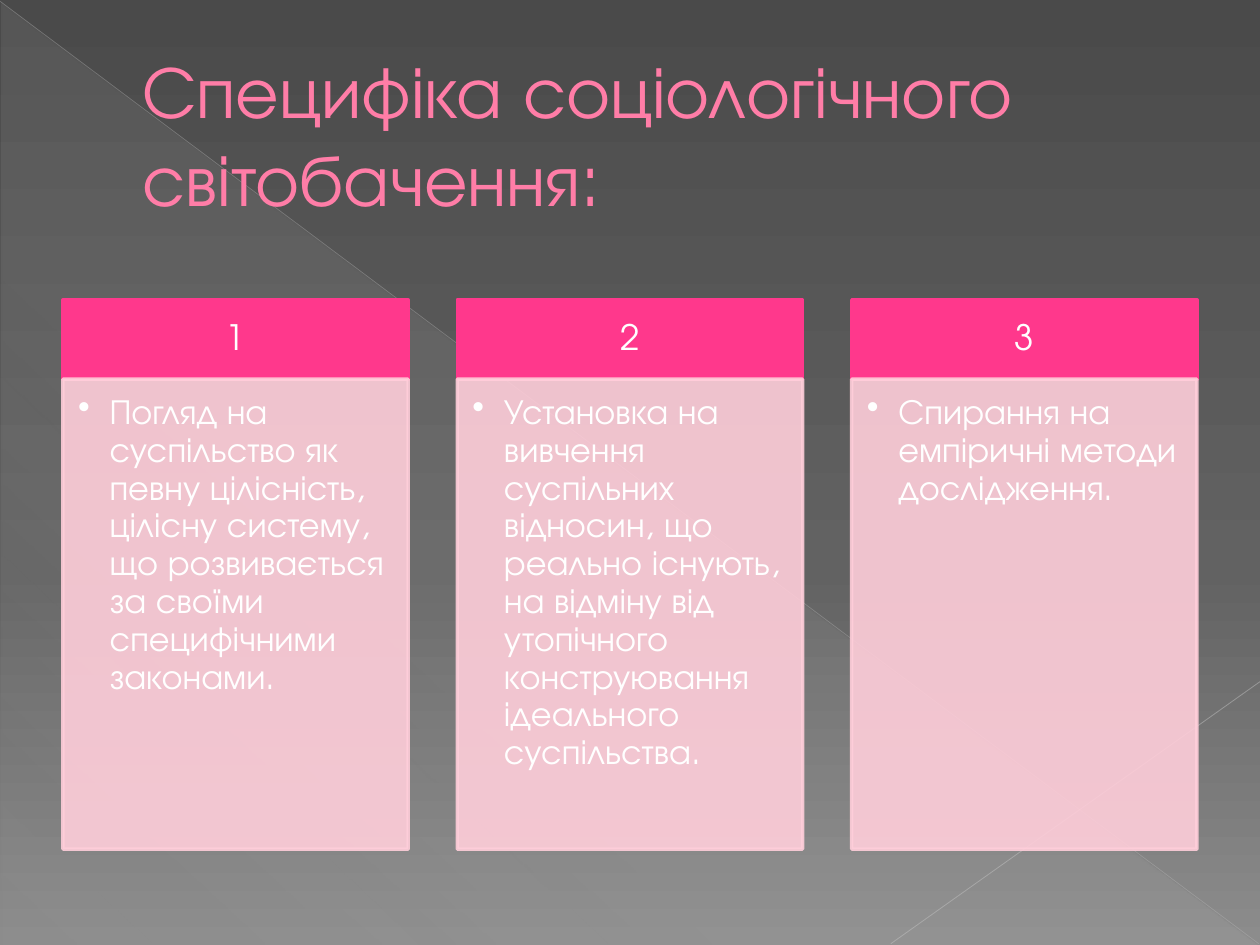
from dataclasses import dataclass

from lxml.etree import SubElement
from pptx import Presentation
from pptx.dml.color import RGBColor
from pptx.enum.shapes import MSO_CONNECTOR, MSO_SHAPE
from pptx.enum.text import MSO_ANCHOR, PP_ALIGN
from pptx.oxml.ns import qn
from pptx.util import Inches, Pt

FONT = "TeX Gyre Adventor"
WHITE = RGBColor(0xFF, 0xFF, 0xFF)
TITLE_PINK = RGBColor(0xFF, 0x7D, 0xA7)
TITLE_EDGE = RGBColor(0xB1, 0x27, 0x61)
HEADER_PINK = RGBColor(0xFF, 0x38, 0x8C)
BODY_PINK = RGBColor(0xFF, 0xCE, 0xDA)
TRIANGLE_GREY = RGBColor(0xD2, 0xD2, 0xD2)
DIAGONAL_GREY = RGBColor(0xBF, 0xBF, 0xBF)
CORNER_GREY = RGBColor(0xC6, 0xC6, 0xC6)
BACKDROP_DARK = RGBColor(0x4A, 0x4A, 0x4A)
BACKDROP_MIDDLE = RGBColor(0x62, 0x62, 0x62)
BACKDROP_LIGHT = RGBColor(0x8C, 0x8C, 0x8C)

CARD_LEFT, CARD_PITCH, CARD_WIDTH = 0.5, 3.13, 2.74
HEADER_TOP, HEADER_HEIGHT = 2.38, 0.63
BODY_TOP, BODY_HEIGHT = HEADER_TOP + HEADER_HEIGHT, 3.73

STATEMENTS = [
    "Погляд на суспільство як певну цілісність, цілісну систему, "
    "що розвивається за своїми специфічними законами.",
    "Установка на вивчення суспільних відносин, що реально існують, "
    "на відміну від утопічного конструювання ідеального суспільства.",
    "Спирання на емпіричні методи дослідження.",
]


@dataclass
class Stop:
    position: int
    color: RGBColor
    opacity: int = 100


@dataclass
class Diagonal:
    start: tuple[float, float]
    end: tuple[float, float]
    color: RGBColor
    width: float
    opacity: int


DIAGONALS = [
    Diagonal((0, 0.01), (9.99, 7.49), DIAGONAL_GREY, 0.39, 35),
    Diagonal((10, 5.41), (7.07, 7.49), CORNER_GREY, 0.47, 45),
]


def add_color(parent, color: RGBColor, opacity: int = 100) -> None:
    node = SubElement(parent, qn("a:srgbClr"), val=str(color))
    if opacity < 100:
        SubElement(node, qn("a:alpha"), val=str(opacity * 1000))


def set_gradient(fill, owner, stops: list[Stop], angle: int) -> None:
    """Give the fill found inside the owner element its stops and clockwise angle."""
    fill.gradient()
    gradient = owner.find(".//" + qn("a:gradFill"))
    stop_list = gradient.find(qn("a:gsLst"))
    for old_stop in list(stop_list):
        stop_list.remove(old_stop)
    for stop in stops:
        node = SubElement(stop_list, qn("a:gs"), pos=str(stop.position * 1000))
        add_color(node, stop.color, stop.opacity)
    gradient.find(qn("a:lin")).set("ang", str(angle * 60000))


def set_opacity(shape, opacity: int) -> None:
    """Apply one opacity to the fill and the line of a shape."""
    for color in shape.element.spPr.iter(qn("a:srgbClr")):
        SubElement(color, qn("a:alpha"), val=str(opacity * 1000))


def style_text(paragraph, size: float, color: RGBColor) -> None:
    for run in paragraph.runs:
        run.font.name = FONT
        run.font.size = Pt(size)
        run.font.color.rgb = color


def set_indent(paragraph, margin: float, first_line: float = 0) -> None:
    properties = paragraph._p.get_or_add_pPr()
    properties.set("marL", str(Inches(margin)))
    properties.set("indent", str(Inches(first_line)))


def set_insets(frame, left: float, top: float, right: float, bottom: float) -> None:
    frame.margin_left, frame.margin_top = Inches(left), Inches(top)
    frame.margin_right, frame.margin_bottom = Inches(right), Inches(bottom)


def add_backdrop(slide) -> None:
    set_gradient(slide.background.fill, slide.element, [
        Stop(0, BACKDROP_DARK), Stop(60, BACKDROP_MIDDLE), Stop(100, BACKDROP_LIGHT),
    ], 90)
    triangle = slide.shapes.add_shape(
        MSO_SHAPE.RIGHT_TRIANGLE, Inches(0.01), Inches(0.02), Inches(9.98), Inches(7.48))
    triangle.shadow.inherit = False
    triangle.line.fill.background()
    set_gradient(triangle.fill, triangle.element, [
        Stop(0, TRIANGLE_GREY, 10), Stop(70, TRIANGLE_GREY, 8), Stop(100, TRIANGLE_GREY, 1),
    ], 133)
    for diagonal in DIAGONALS:
        connector = slide.shapes.add_connector(
            MSO_CONNECTOR.STRAIGHT,
            *(Inches(value) for value in diagonal.start + diagonal.end))
        connector.line.color.rgb = diagonal.color
        connector.line.width = Pt(diagonal.width)
        set_opacity(connector, diagonal.opacity)
        SubElement(connector.element.spPr, qn("a:effectLst"))


def add_title(slide) -> None:
    title = slide.shapes.add_textbox(Inches(0.5), Inches(0.29), Inches(9), Inches(1.53))
    frame = title.text_frame
    frame.word_wrap = True
    frame.vertical_anchor = MSO_ANCHOR.MIDDLE
    frame.text = "Специфіка соціологічного світобачення:"
    heading = frame.paragraphs[0]
    set_indent(heading, 0.53)
    style_text(heading, 42, TITLE_PINK)
    properties = heading.runs[0]._r.get_or_add_rPr()
    outline = SubElement(properties, qn("a:ln"), w=str(Pt(0.5)))
    add_color(SubElement(outline, qn("a:solidFill")), TITLE_EDGE)
    properties.insert(0, outline)


def add_panel(slide, left: float, top: float, height: float, color: RGBColor, text: str):
    """Add one rectangle of a card with its text."""
    panel = slide.shapes.add_shape(
        MSO_SHAPE.RECTANGLE, Inches(left), Inches(top), Inches(CARD_WIDTH), Inches(height))
    panel.shadow.inherit = False
    panel.fill.solid()
    panel.fill.fore_color.rgb = color
    panel.line.color.rgb = color
    panel.line.width = Pt(2)
    panel.text_frame.word_wrap = True
    panel.text_frame.text = text
    paragraph = panel.text_frame.paragraphs[0]
    paragraph.line_spacing = 0.9
    style_text(paragraph, 20, WHITE)
    return panel


def add_card(slide, index: int, statement: str) -> None:
    left = CARD_LEFT + index * CARD_PITCH
    header = add_panel(slide, left, HEADER_TOP, HEADER_HEIGHT, HEADER_PINK, str(index + 1))
    header.text_frame.vertical_anchor = MSO_ANCHOR.MIDDLE
    header.text_frame.paragraphs[0].alignment = PP_ALIGN.CENTER
    set_insets(header.text_frame, 0.16, 0.09, 0.16, 0.09)

    body = add_panel(slide, left, BODY_TOP, BODY_HEIGHT, BODY_PINK, statement)
    set_opacity(body, 90)
    body.text_frame.vertical_anchor = MSO_ANCHOR.TOP
    set_insets(body.text_frame, 0.12, 0.12, 0.16, 0.17)
    paragraph = body.text_frame.paragraphs[0]
    paragraph.alignment = PP_ALIGN.LEFT
    paragraph.space_after = Pt(3)
    set_indent(paragraph, 0.25, -0.25)
    SubElement(paragraph._p.get_or_add_pPr(), qn("a:buChar"), char="•")


def main() -> None:
    presentation = Presentation()
    presentation.slide_width, presentation.slide_height = Inches(10), Inches(7.5)
    slide = presentation.slides.add_slide(presentation.slide_layouts[6])
    add_backdrop(slide)
    add_title(slide)
    for index, statement in enumerate(STATEMENTS):
        add_card(slide, index, statement)
    presentation.save("out.pptx")


if __name__ == "__main__":
    main()
